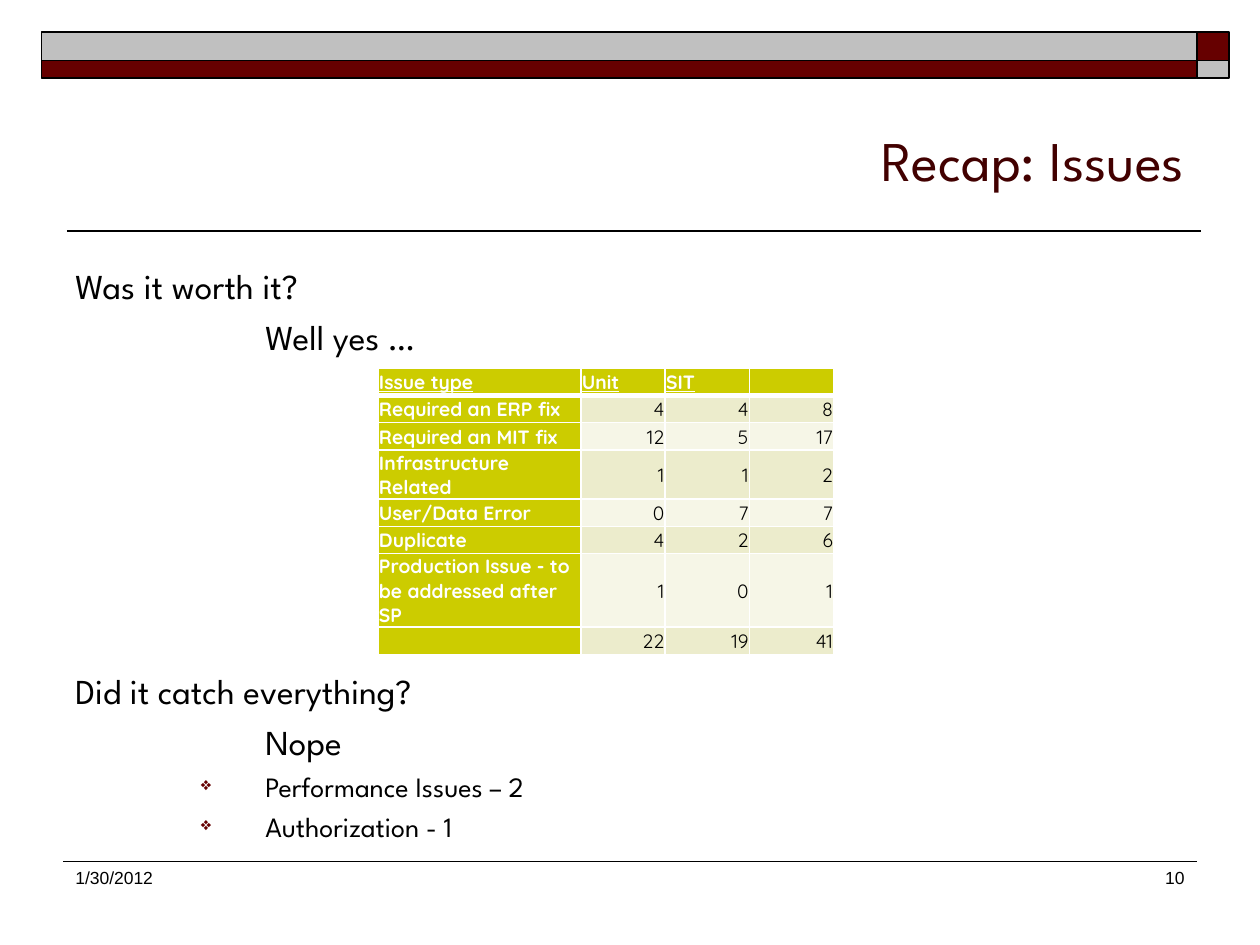
from lxml import etree
from pptx import Presentation
from pptx.dml.color import RGBColor
from pptx.enum.shapes import MSO_CONNECTOR, MSO_SHAPE
from pptx.enum.text import MSO_ANCHOR, PP_ALIGN
from pptx.oxml.ns import qn
from pptx.util import Cm, Pt

RECTANGLE = MSO_SHAPE.RECTANGLE
STRAIGHT = MSO_CONNECTOR.STRAIGHT
LEFT, RIGHT = PP_ALIGN.LEFT, PP_ALIGN.RIGHT
TOP, MIDDLE, BOTTOM = MSO_ANCHOR.TOP, MSO_ANCHOR.MIDDLE, MSO_ANCHOR.BOTTOM

BLACK = RGBColor(0x00, 0x00, 0x00)
WHITE = RGBColor(0xFF, 0xFF, 0xFF)
MAROON = RGBColor(0x66, 0x00, 0x00)
DARK_MAROON = RGBColor(0x42, 0x00, 0x00)
SILVER = RGBColor(0xC0, 0xC0, 0xC0)
OLIVE = RGBColor(0xCC, 0xCC, 0x00)
BAND_DARK = RGBColor(0xEC, 0xEC, 0xCC)
BAND_LIGHT = RGBColor(0xF6, 0xF6, 0xE7)

HEADING_FONT, TABLE_FONT, FOOTER_FONT = "League Spartan", "Quicksand", "Arial"

ISSUES = [
    ("Issue type", "Unit", "SIT", ""),
    ("Required an ERP fix", "4", "4", "8"),
    ("Required an MIT fix", "12", "5", "17"),
    ("Infrastructure Related", "1", "1", "2"),
    ("User/Data Error", "0", "7", "7"),
    ("Duplicate", "4", "2", "6"),
    ("Production Issue - to be addressed after SP", "1", "0", "1"),
    ("", "22", "19", "41"),
]
ROW_HEIGHTS = [0.55, 0.55, 0.55, 0.99, 0.55, 0.55, 1.48, 0.55]
COLUMN_WIDTHS = [4.09, 1.7, 1.7, 1.7]


def style_runs(paragraph, font_name, size, color, bold=False, underline=False):
    for run in paragraph.runs:
        font = run.font
        font.name, font.size, font.color.rgb = font_name, Pt(size), color
        font.bold, font.underline = bold, underline


def add_rule(slide, left, top, width, weight):
    rule = slide.shapes.add_connector(
        STRAIGHT, Cm(left), Cm(top), Cm(left + width), Cm(top))
    rule.line.color.rgb = BLACK
    rule.line.width = Pt(weight)
    etree.SubElement(rule._element.spPr, qn("a:effectLst"))


def add_text_frame(slide, box, anchor=TOP):
    frame = slide.shapes.add_textbox(*map(Cm, box)).text_frame
    frame.word_wrap = True
    frame.vertical_anchor = anchor
    return frame


def add_label(slide, box, text, font_name, size, color, align=LEFT, anchor=TOP):
    paragraph = add_text_frame(slide, box, anchor).paragraphs[0]
    paragraph.text = text
    paragraph.alignment = align
    style_runs(paragraph, font_name, size, color)


def add_banner(slide, left, top, width, height):
    """Two stripes, each ending in a square of the other colour."""
    end_width, upper_height = 0.64, 0.58
    columns = [(left, width - end_width), (left + width - end_width, end_width)]
    rows = [(top, upper_height), (top + upper_height, height - upper_height)]
    for r, (y, h) in enumerate(rows):
        for c, (x, w) in enumerate(columns):
            stripe = slide.shapes.add_shape(RECTANGLE, Cm(x), Cm(y), Cm(w), Cm(h))
            stripe.shadow.inherit = False
            stripe.fill.solid()
            stripe.fill.fore_color.rgb = SILVER if r == c else MAROON
            stripe.line.color.rgb = BLACK
            stripe.line.width = Pt(1)


def add_bullet(paragraph):
    properties = paragraph._p.get_or_add_pPr()
    color = etree.SubElement(properties, qn("a:buClr"))
    etree.SubElement(color, qn("a:srgbClr"), val=str(MAROON))
    etree.SubElement(properties, qn("a:buSzPct"), val="65000")
    etree.SubElement(properties, qn("a:buChar"), char="❖")


def add_question(slide, box, question, answer, findings=()):
    """A question, its indented answer and the bulleted findings."""
    frame = add_text_frame(slide, box)
    frame.text = "\n".join([question, answer, *findings])
    for i, paragraph in enumerate(frame.paragraphs):
        is_finding = i > 1
        size = 16 if is_finding else 20
        if i > 0:
            paragraph.space_before = Pt(size / 4)
            properties = paragraph._p.get_or_add_pPr()
            properties.set("marL", str(Cm(3.83)))
            properties.set("indent", str(Cm(-1.3) if is_finding else 0))
        if is_finding:
            paragraph.level = 2
            add_bullet(paragraph)
        style_runs(paragraph, HEADING_FONT, size, BLACK)


def set_borders(cell, bottom_weight):
    properties = cell._tc.get_or_add_tcPr()
    weights = {"a:lnL": 1, "a:lnR": 1, "a:lnT": 1, "a:lnB": bottom_weight}
    for i, (tag, weight) in enumerate(weights.items()):
        border = etree.Element(qn(tag), w=str(Pt(weight)))
        fill = etree.SubElement(border, qn("a:solidFill"))
        etree.SubElement(fill, qn("a:srgbClr"), val=str(WHITE))
        properties.insert(i, border)


def fill_cell(cell, text, row, column):
    is_header = row == 0
    is_label = is_header or column == 0
    cell.margin_left = cell.margin_right = cell.margin_top = Cm(0.02)
    cell.margin_bottom = 0
    cell.vertical_anchor = MIDDLE
    cell.fill.solid()
    band = BAND_DARK if row % 2 else BAND_LIGHT
    cell.fill.fore_color.rgb = OLIVE if is_label else band
    set_borders(cell, 3 if is_header else 1)

    paragraph = cell.text_frame.paragraphs[0]
    paragraph.text = text
    paragraph.alignment = LEFT if is_label else RIGHT
    style_runs(paragraph, TABLE_FONT, 11, WHITE if is_label else BLACK,
               bold=is_label, underline=is_header)
    if not text:  # keeps an empty cell from stretching its row
        etree.SubElement(paragraph._p, qn("a:endParaRPr"), sz="1100")


def add_issue_table(slide, left, top):
    table = slide.shapes.add_table(
        len(ISSUES), len(COLUMN_WIDTHS), Cm(left), Cm(top),
        Cm(sum(COLUMN_WIDTHS)), Cm(sum(ROW_HEIGHTS))).table
    for column, width in zip(table.columns, COLUMN_WIDTHS):
        column.width = Cm(width)
    for r, (height, values) in enumerate(zip(ROW_HEIGHTS, ISSUES)):
        table.rows[r].height = Cm(height)
        for c, text in enumerate(values):
            fill_cell(table.cell(r, c), text, r, c)


def add_footer(slide, left, top, width, height):
    add_rule(slide, left, top, width, 0.75)
    date_width, number_width = 4.65, 5.28
    add_label(slide, (left, top, date_width, height), "1/30/2012",
              FOOTER_FONT, 10, BLACK)
    add_label(slide, (left + width - number_width, top, number_width, height),
              "10", FOOTER_FONT, 10, BLACK, align=RIGHT)


def main():
    presentation = Presentation()
    presentation.slide_width, presentation.slide_height = Cm(25.4), Cm(19.05)
    slide = presentation.slides.add_slide(presentation.slide_layouts[6])
    left, width = 1.27, 22.86

    # Header
    add_banner(slide, 0.84, 0.64, 23.93, 0.94)
    add_rule(slide, 1.35, 4.65, width, 1)
    add_label(slide, (left, 1.48, width, 2.54), "Recap: Issues",
              HEADING_FONT, 32, DARK_MAROON, align=RIGHT, anchor=BOTTOM)

    # Questions around the issue counts
    add_question(slide, (left, 5.21, width, 2.2), "Was it worth it?", "Well yes …")
    add_issue_table(slide, 7.62, 7.42)
    add_question(slide, (left, 13.37, width, 3.8), "Did it catch everything?",
                 "Nope", ["Performance Issues – 2", "Authorization - 1"])

    add_footer(slide, left, 17.36, width, 1.27)
    presentation.save("out.pptx")


if __name__ == "__main__":
    main()
